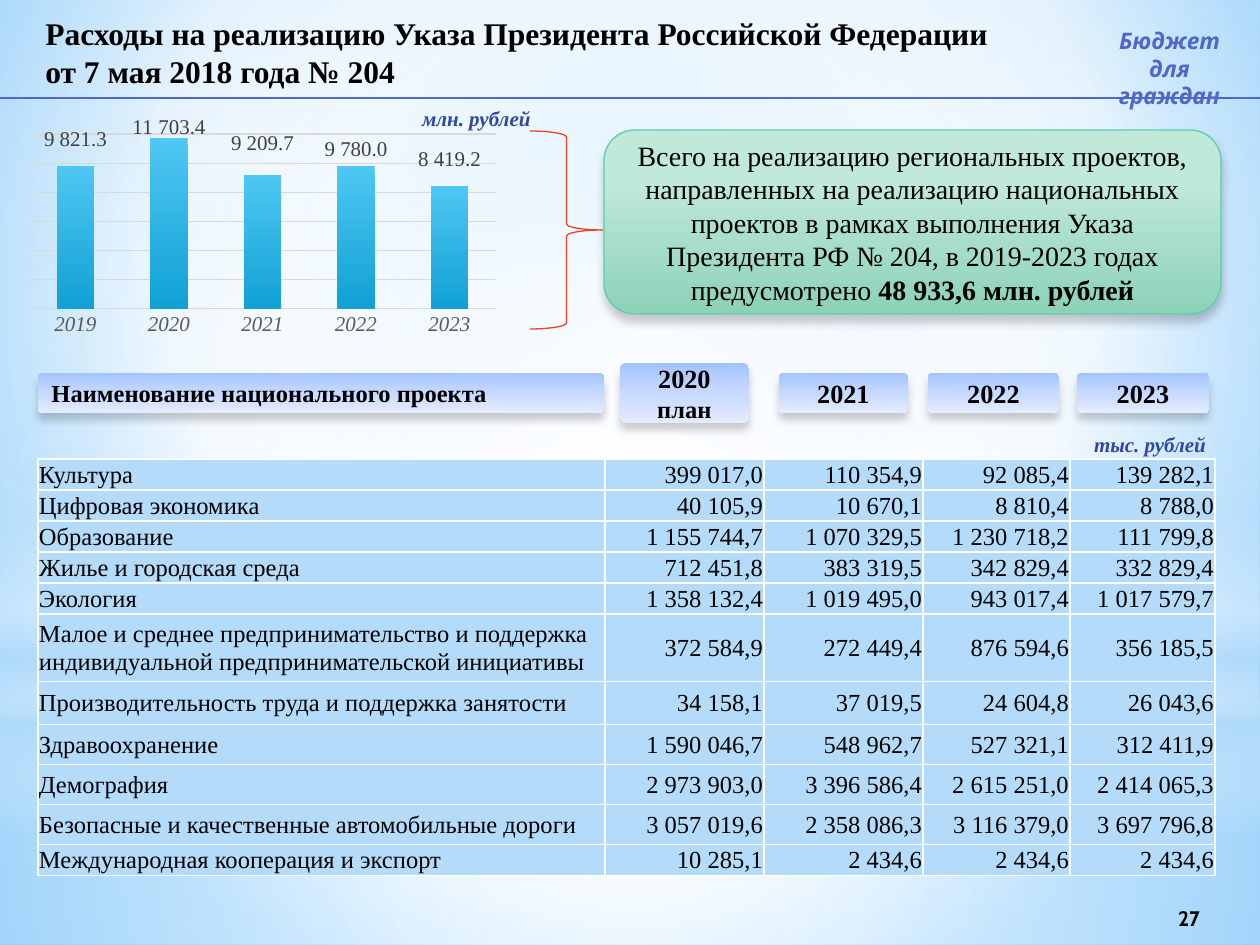
"""Build the slide on national project spending under Decree No. 204."""
from copy import deepcopy

from pptx import Presentation
from pptx.chart.data import CategoryChartData
from pptx.dml.color import RGBColor
from pptx.enum.chart import XL_CHART_TYPE, XL_TICK_LABEL_POSITION, XL_TICK_MARK
from pptx.enum.shapes import MSO_CONNECTOR, MSO_SHAPE
from pptx.enum.text import MSO_ANCHOR, PP_ALIGN
from pptx.oxml import parse_xml
from pptx.oxml.ns import nsdecls, qn
from pptx.util import Inches, Pt

PX = 914400 // 126
SERIF = "Times New Roman"
LEFT, CENTER, RIGHT = PP_ALIGN.LEFT, PP_ALIGN.CENTER, PP_ALIGN.RIGHT
color = RGBColor.from_string


def gradient(stops, focus=None):
    marks = "".join(
        f'<a:gs pos="{pos * 1000}"><a:srgbClr val="{shade}">'
        f'<a:alpha val="{alpha * 1000}"/></a:srgbClr></a:gs>'
        for pos, shade, alpha in stops)
    course = '<a:lin ang="5400000" scaled="0"/>'
    if focus:
        sides = " ".join(f'{side}="{value * 1000}"' for side, value in zip("ltrb", focus))
        course = f'<a:path path="circle"><a:fillToRect {sides}/></a:path>'
    return parse_xml(f'<a:gradFill {nsdecls("a")} rotWithShape="1">'
                     f'<a:gsLst>{marks}</a:gsLst>{course}</a:gradFill>')


def write(frame, lines, size, shade="000000", align=LEFT, name=SERIF, bold=True, italic=False):
    frame.word_wrap = True
    for index, line in enumerate(lines):
        para = frame.add_paragraph() if index else frame.paragraphs[0]
        para.text = line
        para.alignment = align
        para.font.size = Pt(size)
        para.font.name = name
        para.font.bold = bold
        para.font.italic = italic
        para.font.color.rgb = color(shade)


deck = Presentation()
deck.slide_width, deck.slide_height = Inches(10), Inches(7.5)
page = deck.slides.add_slide(deck.slide_layouts[6])

page.background.fill.solid()
backdrop = page.element.xpath(".//p:bgPr")[0]
backdrop.replace(backdrop[0], gradient(
    [(0, "9ED5FF", 100), (60, "FFFFFF", 100), (100, "5BB9FF", 100)], (20, 10, 20, 60)))

MIDDLE = (50, 50, 50, 50)
glows = [
    (MSO_SHAPE.RECTANGLE, 703, 242,
     [(0, "FFFFFF", 91), (37, "FFFFFF", 76), (100, "B4DCFA", 79)], MIDDLE),
    (MSO_SHAPE.RECTANGLE, 0, 703,
     [(0, "FFFFFF", 89), (48, "FFFFFF", 62), (100, "B4DCFA", 79)], MIDDLE),
    (MSO_SHAPE.RECTANGLE, 519, 315,
     [(0, "FFFFFF", 0), (29, "FFFFFF", 30), (45, "B4DCFA", 40),
      (55, "FFFFFF", 26), (65, "B4DCFA", 60), (100, "FFFFFF", 0)], None),
    (MSO_SHAPE.OVAL, 221, 703, [(0, "FFFFFF", 100), (56, "FFFFFF", 0)], MIDDLE),
]
for kind, top, height, stops, focus in glows:
    glow = page.shapes.add_shape(kind, 0, top * PX, 1260 * PX, height * PX)
    glow.shadow.inherit = False
    glow.line.fill.background()
    glow.element.spPr.insert(2, gradient(stops, focus))

title = page.shapes.add_textbox(33 * PX, 8 * PX, 1050 * PX, 83 * PX)
write(title.text_frame, ["Расходы на реализацию Указа Президента Российской Федерации",
                         "от 7 мая 2018 года № 204"], 18)

rule = page.shapes.add_connector(MSO_CONNECTOR.STRAIGHT, 0, 98 * PX, 1260 * PX, 98 * PX)
rule.line.color.rgb = color("4E67C8")
rule.line.width = Pt(0.75)
rule.element.spPr.append(parse_xml(f'<a:effectLst {nsdecls("a")}/>'))

motto = page.shapes.add_textbox(1085 * PX, 21 * PX, 169 * PX, 68 * PX)
write(motto.text_frame, ["Бюджет", "для граждан"], 13, "4E67C8", CENTER, "Cabin", italic=True)

for text, left, top, align in [("млн. рублей", 422, 105, LEFT),
                               ("тыс. рублей", 1037, 432, RIGHT)]:
    unit = page.shapes.add_textbox(left * PX, top * PX, 169 * PX, 30 * PX)
    frame = unit.text_frame
    frame.margin_left = frame.margin_right = frame.margin_top = frame.margin_bottom = 0
    write(frame, [text], 12, "31489F", align, italic=True)

number = page.shapes.add_textbox(1155 * PX, 908 * PX, 68 * PX, 20 * PX)
number.text_frame.vertical_anchor = MSO_ANCHOR.MIDDLE
write(number.text_frame, ["27"], 12, align=CENTER, name="Cabin")

data = CategoryChartData()
data.categories = ["2019", "2020", "2021", "2022", "2023"]
data.add_series("Series 1", [9821.3, 11703.4, 9209.7, 9780, 8419.2])
chart = page.shapes.add_chart(XL_CHART_TYPE.COLUMN_STACKED, 28 * PX, 112 * PX,
                              469 * PX, 246 * PX, data).chart
chart.has_legend = chart.has_title = False
chart.font.size = Pt(10)
chart.font.name = "Cabin"
chart.font.color.rgb = color("000000")

years = chart.category_axis
years.major_tick_mark = XL_TICK_MARK.NONE
years.tick_labels.font.size = Pt(12)
years.tick_labels.font.name = SERIF
years.tick_labels.font.italic = True
years.tick_labels.font.color.rgb = color("595959")
amounts = chart.value_axis
amounts.minimum_scale, amounts.maximum_scale, amounts.major_unit = 0, 12000, 2000
amounts.major_tick_mark = XL_TICK_MARK.NONE
amounts.tick_label_position = XL_TICK_LABEL_POSITION.NONE
amounts.format.line.fill.background()
for line in (years.format.line, amounts.major_gridlines.format.line):
    line.color.rgb = color("D9D9D9")
    line.width = Pt(0.75)

plot = chart.plots[0]
plot.gap_width, plot.overlap, plot.vary_by_categories = 150, 100, False
series = plot.series[0]
series.format.line.fill.background()
series._element.find(qn("c:spPr")).insert(
    0, gradient([(0, "4EC7F2", 100), (100, "11A1D4", 100)]))
labels = series.data_labels
labels.show_value = True
labels.number_format = r"#\ ##0.0"
labels.number_format_is_linked = False
labels.font.size = Pt(12)
labels.font.name = SERIF
labels.font.color.rgb = color("404040")
label_list = series._element.find(qn("c:dLbls"))
for leader in label_list.findall(qn("c:showLeaderLines")):
    label_list.remove(leader)
shared = list(label_list)
for index, shift in enumerate([-0.4, -0.39, -0.4, -0.36, -0.36]):
    label = parse_xml(
        f'<c:dLbl {nsdecls("c")}><c:idx val="{index}"/><c:layout><c:manualLayout>'
        f'<c:x val="0"/><c:y val="{shift}"/></c:manualLayout></c:layout></c:dLbl>')
    label.extend(deepcopy(child) for child in shared)
    label_list.insert(index, label)
label_list.append(parse_xml(f'<c:showLeaderLines {nsdecls("c")} val="0"/>'))
label_list.append(parse_xml(
    f'<c:extLst {nsdecls("c")}><c:ext uri="{{CE6537A1-D6FC-4f65-9D91-7224C49458BB}}" '
    'xmlns:c15="http://schemas.microsoft.com/office/drawing/2012/chart">'
    '<c15:showLeaderLines val="0"/></c:ext></c:extLst>'))

area = chart._chartSpace.xpath(".//c:plotArea")[0]
for layout in area.findall(qn("c:layout")):
    area.remove(layout)
area.insert(0, parse_xml(
    f'<c:layout {nsdecls("c")}><c:manualLayout><c:layoutTarget val="inner"/>'
    '<c:xMode val="edge"/><c:yMode val="edge"/><c:x val="0"/><c:y val="0.09"/>'
    '<c:w val="1"/><c:h val="0.71"/></c:manualLayout></c:layout>'))

brace = page.shapes.add_shape(MSO_SHAPE.RIGHT_BRACE, 530 * PX, 131 * PX, 73 * PX, 198 * PX)
brace.shadow.inherit = False
brace.fill.background()
brace.line.color.rgb = color("F14124")
brace.line.width = Pt(0.75)

BLUE = [(0, "A3C4FF", 100), (50, "C7D9FF", 100), (100, "E4ECFF", 100)]
GREEN = [(28, "C0E9DA", 100), (100, "8CD1B8", 100)]
summary = ("Всего на реализацию региональных проектов, направленных на реализацию "
           "национальных проектов в рамках выполнения Указа Президента РФ № 204, "
           "в 2019-2023 годах предусмотрено ")
panels = [
    (38, 373, 566, 40, BLUE, LEFT, [("Наименование национального проекта", 14, True)]),
    (620, 363, 129, 60, BLUE, CENTER, [("2020 ", 15, True), ("план", 14, True)]),
    (779, 373, 129, 40, BLUE, CENTER, [("2021", 15, True)]),
    (928, 373, 131, 40, BLUE, CENTER, [("2022", 15, True)]),
    (1077, 373, 132, 40, BLUE, CENTER, [("2023", 15, True)]),
    (604, 130, 617, 184, GREEN, CENTER,
     [(summary, 16, False), ("48 933,6 млн. рублей", 16, True)]),
]
for left, top, width, height, stops, align, spans in panels:
    panel = page.shapes.add_shape(MSO_SHAPE.ROUNDED_RECTANGLE, left * PX, top * PX,
                                  width * PX, height * PX)
    panel.element.spPr.insert(2, gradient(stops))
    if stops is GREEN:
        panel.line.color.rgb = color("5DCEAF")
        panel.line.width = Pt(0.75)
    else:
        panel.adjustments[0] = 0.1
        panel.line.fill.background()
    panel.shadow.inherit = False
    panel.element.spPr.find(qn("a:effectLst")).append(parse_xml(
        f'<a:outerShdw {nsdecls("a")} blurRad="63500" dist="50800" dir="5400000" '
        'rotWithShape="0"><a:srgbClr val="000000"><a:alpha val="20000"/></a:srgbClr>'
        '</a:outerShdw>'))
    panel.text_frame.vertical_anchor = MSO_ANCHOR.MIDDLE
    write(panel.text_frame, [""], 16, align=align)
    for text, size, bold in spans:
        span = panel.text_frame.paragraphs[0].add_run()
        span.text = text
        span.font.size, span.font.bold = Pt(size), bold

projects = [
    (31, "Культура", "399 017,0", "110 354,9", "92 085,4", "139 282,1"),
    (31, "Цифровая экономика", "40 105,9", "10 670,1", "8 810,4", "8 788,0"),
    (31, "Образование", "1 155 744,7", "1 070 329,5", "1 230 718,2", "111 799,8"),
    (31, "Жилье и городская среда", "712 451,8", "383 319,5", "342 829,4", "332 829,4"),
    (31, "Экология", "1 358 132,4", "1 019 495,0", "943 017,4", "1 017 579,7"),
    (68, "Малое и среднее предпринимательство и поддержка индивидуальной "
     "предпринимательской инициативы", "372 584,9", "272 449,4", "876 594,6", "356 185,5"),
    (43, "Производительность труда и поддержка занятости",
     "34 158,1", "37 019,5", "24 604,8", "26 043,6"),
    (40, "Здравоохранение", "1 590 046,7", "548 962,7", "527 321,1", "312 411,9"),
    (40, "Демография", "2 973 903,0", "3 396 586,4", "2 615 251,0", "2 414 065,3"),
    (40, "Безопасные и качественные автомобильные дороги",
     "3 057 019,6", "2 358 086,3", "3 116 379,0", "3 697 796,8"),
    (31, "Международная кооперация и экспорт", "10 285,1", "2 434,6", "2 434,6", "2 434,6"),
]
table = page.shapes.add_table(len(projects), 5, 38 * PX, 459 * PX, 1177 * PX, 416 * PX).table
table.first_row = table.horz_banding = False
for column, width in zip(table.columns, [567, 159, 159, 147, 145]):
    column.width = width * PX
for row, (height, *texts) in zip(table.rows, projects):
    row.height = height * PX
    for index, (cell, text) in enumerate(zip(row.cells, texts)):
        cell.margin_left = cell.margin_right = cell.margin_top = PX
        cell.margin_bottom = 0
        cell.vertical_anchor = MSO_ANCHOR.MIDDLE
        write(cell.text_frame, [text], 14, align=RIGHT if index else LEFT, bold=False)
        for side in "LRTB":
            cell._tc.tcPr.append(parse_xml(
                f'<a:ln{side} {nsdecls("a")} w="12700"><a:solidFill>'
                f'<a:srgbClr val="FFFFFF"/></a:solidFill></a:ln{side}>'))
        cell.fill.solid()
        cell.fill.fore_color.rgb = color("B4DCFA")

deck.save("out.pptx")
